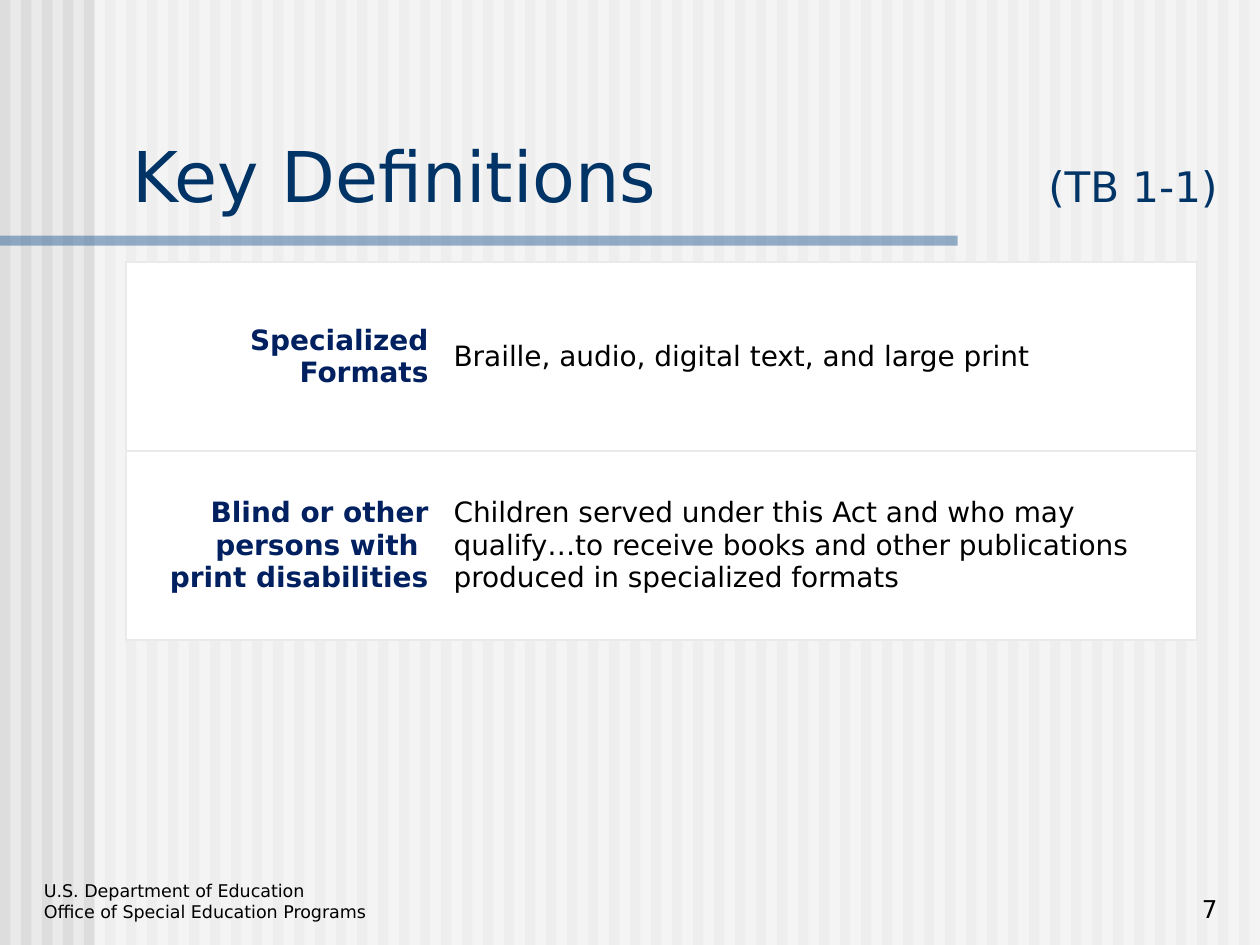
from lxml.etree import SubElement
from pptx import Presentation
from pptx.dml.color import RGBColor
from pptx.enum.shapes import MSO_SHAPE as Shape
from pptx.enum.text import MSO_ANCHOR as Anchor, MSO_AUTO_SIZE as AutoSize, PP_ALIGN as Align
from pptx.oxml.ns import qn
from pptx.util import Inches, Pt

COLORS = {
    "background": "EAEAEA", "stripe": "DDDDDD", "white": "FFFFFF", "rule": "336699",
    "title": "003366", "term": "002060", "text": "000000",
}
FONT = "DejaVu Sans"


def add_band(shapes, left, top, width, height, color, alpha=None):
    """Add a borderless rectangle, with an optional opacity in percent."""
    band = shapes.add_shape(Shape.RECTANGLE, Inches(left), Inches(top), Inches(width), Inches(height))
    band.shadow.inherit = False
    band.line.fill.background()
    band.fill.solid()
    band.fill.fore_color.rgb = RGBColor.from_string(COLORS[color])
    if alpha:
        tint = band.element.spPr.find(qn("a:solidFill"))[0]
        SubElement(tint, qn("a:alpha"), val=str(alpha * 1000))


def add_span(para, text, size, color, bold=False):
    span = para.add_run()
    span.text = text
    span.font.name = FONT
    span.font.size = Pt(size)
    span.font.bold = bold
    span.font.color.rgb = RGBColor.from_string(COLORS[color])


deck = Presentation()
deck.slide_width, deck.slide_height = Inches(10), Inches(7.5)
page = deck.slides.add_slide(deck.slide_layouts[5])
page.background.fill.solid()
page.background.fill.fore_color.rgb = RGBColor.from_string(COLORS["background"])

# Striped backdrop, lightened to the right of the margin
backdrop = page.shapes.add_group_shape()
for index in range(60):
    add_band(backdrop.shapes, index / 6, 0, 1 / 12, 7.5, "stripe")
add_band(backdrop.shapes, 0.75, 0, 9.25, 7.5, "white", alpha=50)
add_band(page.shapes, 0, 1.87, 7.6, 0.08, "rule", alpha=50)

# Title, brought in front of the backdrop
title = page.shapes.title
title.element.getparent().append(title.element)
title.left, title.top, title.width, title.height = Inches(0.95), Inches(1), Inches(8.93), Inches(0.77)
frame = title.text_frame
frame.auto_size = AutoSize.NONE
frame.vertical_anchor = Anchor.BOTTOM
para = frame.paragraphs[0]
para.alignment = Align.LEFT
tabs = SubElement(para._p.get_or_add_pPr(), qn("a:tabLst"))
SubElement(tabs, qn("a:tab"), pos=str(Inches(7.27)), algn="l")
add_span(para, "Key Definitions \t", 40, "title")
add_span(para, "(TB 1-1)", 24, "title")

# Footer and page number
footers = [
    (0.25, 6.79, 3.33, 0.58, 10, Align.LEFT,
     ["U.S. Department of Education", "Office of Special Education Programs"]),
    (7.68, 6.88, 2.08, 0.5, 14, Align.RIGHT, ["7"]),
]
for left, top, width, height, size, align, lines in footers:
    box = page.shapes.add_textbox(Inches(left), Inches(top), Inches(width), Inches(height))
    frame = box.text_frame
    frame.word_wrap = True
    frame.vertical_anchor = Anchor.BOTTOM
    for index, line in enumerate(lines):
        para = frame.add_paragraph() if index else frame.paragraphs[0]
        para.alignment = align
        add_span(para, line, size, "text")

# Definitions table
definitions = [
    (["Specialized Formats"], ["Braille, audio, digital text, and large print"]),
    (["Blind or other persons with ", "print disabilities"],
     ["Children served under this Act and who may qualify…to receive books "
      "and other publications produced in specialized formats"]),
]
table = page.shapes.add_table(2, 2, Inches(1), Inches(2.08), Inches(8.5), Inches(3)).table
table.first_row = table.horz_banding = False
table.columns[0].width, table.columns[1].width = Inches(2.5), Inches(6)
for row, definition in enumerate(definitions):
    for column, lines in enumerate(definition):
        is_term = column == 0
        cell = table.cell(row, column)
        cell.vertical_anchor = Anchor.MIDDLE
        inner_side = "R" if is_term else "L"
        for side in "LRTB":
            border = SubElement(cell._tc.get_or_add_tcPr(), qn(f"a:ln{side}"), w=str(Pt(1)))
            if side == inner_side:
                SubElement(border, qn("a:noFill"))
            else:
                paint = SubElement(border, qn("a:solidFill"))
                SubElement(paint, qn("a:srgbClr"), val=COLORS["background"])
        cell.fill.solid()
        cell.fill.fore_color.rgb = RGBColor.from_string(COLORS["white"])
        para = cell.text_frame.paragraphs[0]
        para.alignment = Align.RIGHT if is_term else Align.LEFT
        for index, line in enumerate(lines):
            if index:
                para.add_line_break()
            add_span(para, line, 16, "term" if is_term else "text", bold=is_term)

deck.save("out.pptx")
